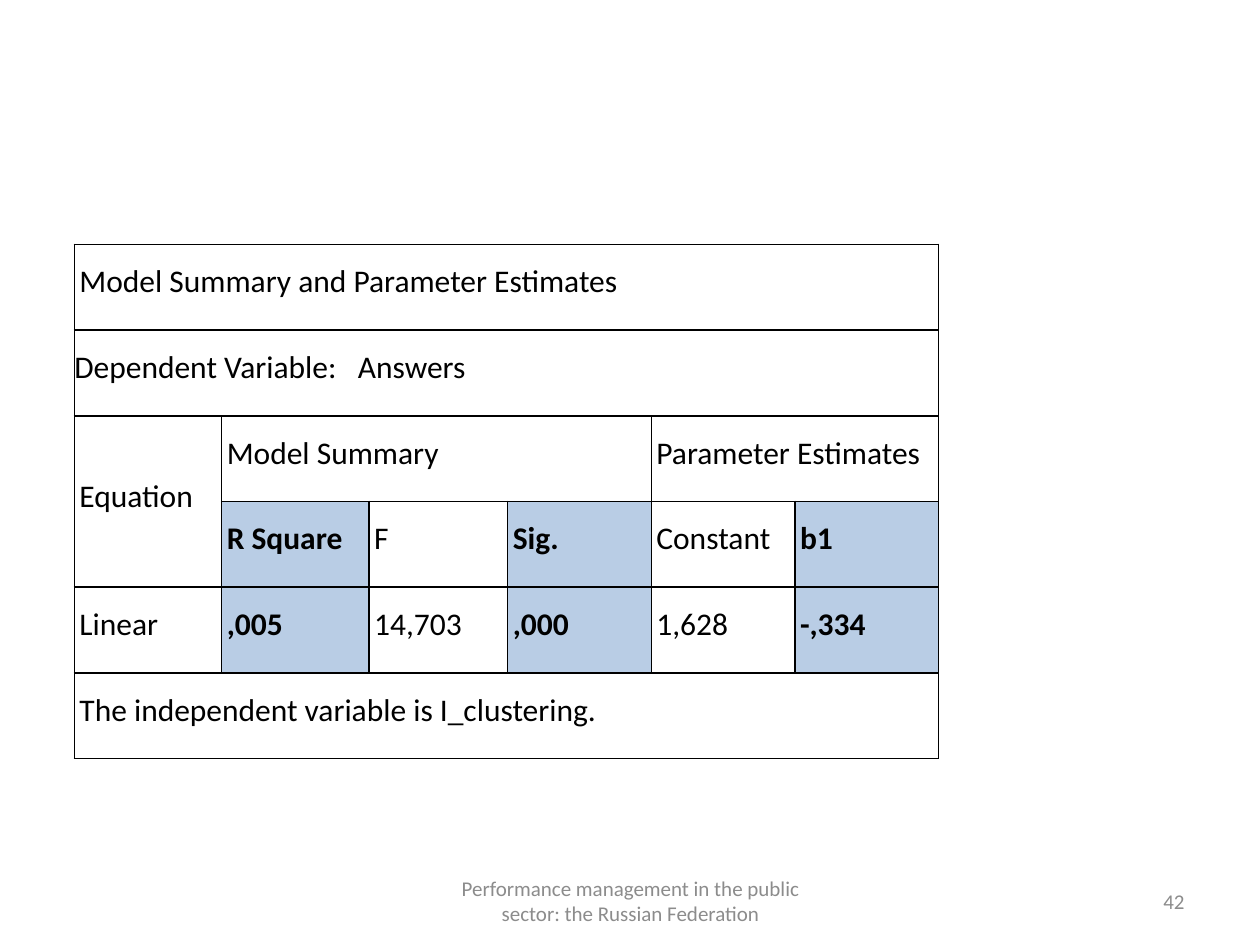
from lxml import etree
from pptx import Presentation, util as u
from pptx.dml.color import RGBColor
from pptx.enum import text
from pptx.oxml import ns

BLACK = RGBColor(0x00, 0x00, 0x00)
GREY = RGBColor(0x8C, 0x8C, 0x8C)
PALE_BLUE = RGBColor(0xB9, 0xCD, 0xE5)
FONT = "Calibri"

COLUMNS = [1.17, 1.17, 1.1, 1.14, 1.14, 1.14]
ROW_HEIGHT = 0.68
ROWS = [
    ["Model Summary and Parameter Estimates"],
    ["Dependent Variable:\tAnswers"],
    ["Equation", "Model Summary", "", "", "Parameter Estimates"],
    ["", "R Square", "F", "Sig.", "Constant", "b1"],
    ["Linear", ",005", "14,703", ",000", "1,628", "-,334"],
    ["The independent variable is I_clustering."],
]
MERGES = [
    ((0, 0), (0, 5)),
    ((1, 0), (1, 5)),
    ((2, 0), (3, 0)),
    ((2, 1), (2, 3)),
    ((2, 4), (2, 5)),
    ((5, 0), (5, 5)),
]
DEPENDENT_ROW = 1
KEY_ROWS = (3, 4)
KEY_COLUMNS = (1, 3, 5)


def add_span(para, words, size, color, bold=False):
    span = para.add_run()
    span.text = words
    span.font.name = FONT
    span.font.size = u.Pt(size)
    span.font.bold = bold
    span.font.color.rgb = color


def set_borders(cell, color, width):
    properties = cell._tc.get_or_add_tcPr()
    for index, side in enumerate(("lnL", "lnR", "lnT", "lnB")):
        line = etree.Element(ns.qn(f"a:{side}"), w=str(u.Pt(width)))
        fill = etree.SubElement(line, ns.qn("a:solidFill"))
        etree.SubElement(fill, ns.qn("a:srgbClr"), val=str(color))
        properties.insert(index, line)


def indent(para, inches):
    para._p.get_or_add_pPr().set("marL", str(u.Inches(inches)))


def add_tab_stop(para, inches):
    stops = etree.SubElement(para._p.get_or_add_pPr(), ns.qn("a:tabLst"))
    etree.SubElement(stops, ns.qn("a:tab"), pos=str(u.Inches(inches)), algn="l")


def fill_cell(cell, words, key, dependent):
    cell.margin_left = cell.margin_right = 0
    cell.margin_top = cell.margin_bottom = 0
    cell.vertical_anchor = text.MSO_ANCHOR.MIDDLE
    if key:
        cell.fill.solid()
        cell.fill.fore_color.rgb = PALE_BLUE
    else:
        cell.fill.background()
    set_borders(cell, BLACK, 1)
    if not words:
        return
    para = cell.text_frame.paragraphs[0]
    para.alignment = text.PP_ALIGN.JUSTIFY
    para.line_spacing = u.Pt(16)
    if dependent:
        add_tab_stop(para, 2.25)
    else:
        indent(para, 0.04)
    add_span(para, words, 18, BLACK, key)


def add_estimates(page, left, top):
    width, height = sum(COLUMNS), ROW_HEIGHT * len(ROWS)
    frame = page.shapes.add_table(
        len(ROWS), len(COLUMNS),
        u.Inches(left), u.Inches(top), u.Inches(width), u.Inches(height))
    table = frame.table
    table.first_row = table.horz_banding = False
    for column, size in zip(table.columns, COLUMNS):
        column.width = u.Inches(size)
    for row in table.rows:
        row.height = u.Inches(ROW_HEIGHT)
    for start, end in MERGES:
        table.cell(*start).merge(table.cell(*end))
    for r, entries in enumerate(ROWS):
        for c in range(len(COLUMNS)):
            words = entries[c] if c < len(entries) else ""
            key = r in KEY_ROWS and c in KEY_COLUMNS
            fill_cell(table.cell(r, c), words, key, r == DEPENDENT_ROW)


def add_footer(page, top, height):
    parts = [
        (3.42, 3.17, "Performance management in the public sector: the Russian Federation",
         text.PP_ALIGN.CENTER),
        (7.17, 2.33, "42", text.PP_ALIGN.RIGHT),
    ]
    for left, width, words, alignment in parts:
        box = page.shapes.add_textbox(
            u.Inches(left), u.Inches(top), u.Inches(width), u.Inches(height))
        box.text_frame.word_wrap = True
        box.text_frame.vertical_anchor = text.MSO_ANCHOR.MIDDLE
        para = box.text_frame.paragraphs[0]
        para.alignment = alignment
        add_span(para, words, 12, GREY)


def main():
    deck = Presentation()
    deck.slide_width, deck.slide_height = u.Inches(10), u.Inches(7.5)
    page = deck.slides.add_slide(deck.slide_layouts[6])
    add_estimates(page, 0.59, 1.94)
    add_footer(page, 6.95, 0.4)
    deck.save("out.pptx")


if __name__ == "__main__":
    main()
